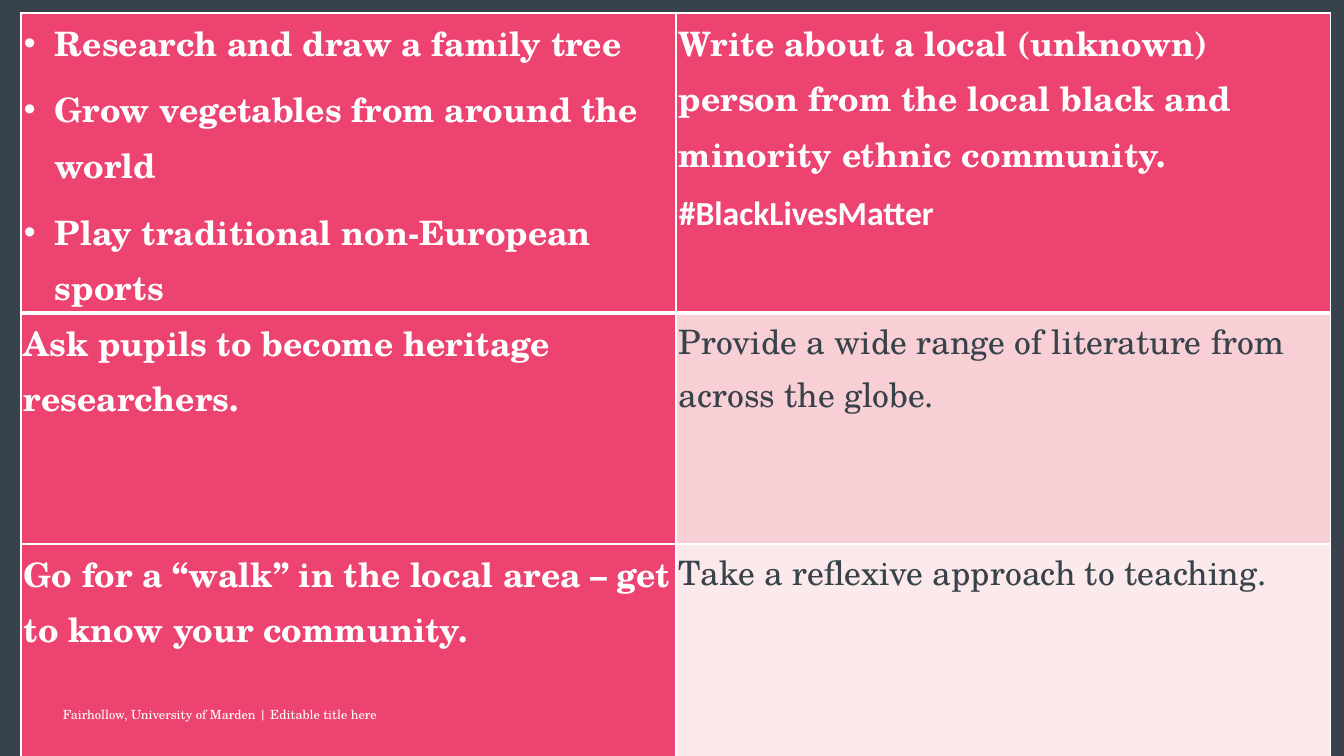
from dataclasses import dataclass

from lxml.etree import SubElement as Sub
from pptx import Presentation as Deck
from pptx.dml.color import RGBColor as Rgb
from pptx.oxml import parse_xml as to_xml
from pptx.oxml.ns import nsdecls, qn
from pptx.slide import Slide
from pptx.table import _Cell as Cell
from pptx.text.text import _Paragraph as Para
from pptx.util import Emu, Pt

WHITE = Rgb(0xFF, 0xFF, 0xFF)
SLATE = Rgb(0x37, 0x42, 0x4A)
PINK = Rgb(0xEC, 0x43, 0x71)
ROSE = Rgb(0xF8, 0xCF, 0xD5)
BLUSH = Rgb(0xFB, 0xE9, 0xEB)

SERIF = "TeX Gyre Schola"
SANS = "Calibri"
WIDE, HIGH = 1344, 756
COL = 655
ROWS = (230, 231, 246)
INDENT = 31


def px(count: int) -> Emu:
    return Emu(round(count * 914400 / 100.8))


@dataclass(frozen=True)
class Line:
    text: str
    font: str = SERIF
    dot: bool = False


@dataclass(frozen=True)
class Box:
    lines: tuple[Line, ...]
    fill: Rgb = PINK
    ink: Rgb = WHITE
    bold: bool = True


GRID = (
    (
        Box((
            Line("Research and draw a family tree", dot=True),
            Line("Grow vegetables from around the world", dot=True),
            Line("Play traditional non-European sports", dot=True),
        )),
        Box((
            Line("Write about a local (unknown) person from the local black "
                 "and minority ethnic community."),
            Line("#BlackLivesMatter", SANS),
        )),
    ),
    (
        Box((Line("Ask pupils to become heritage researchers."),)),
        Box((Line("Provide a wide range of literature from across the globe."),),
            ROSE, SLATE, False),
    ),
    (
        Box((Line("Go for a “walk” in the local area – get to know your "
                  "community."),)),
        Box((Line("Take a reflexive approach to teaching."),),
            BLUSH, SLATE, False),
    ),
)


def style(item: object, form: dict[str, object]) -> None:
    for name, value in form.items():
        setattr(item, name, value)


def write(para: Para, text: str, ink: Rgb, form: dict[str, object]) -> None:
    run = para.add_run()
    run.text = text
    style(run.font, form)
    run.font.color.rgb = ink


def add_dot(para: Para) -> None:
    props = para._p.get_or_add_pPr()
    props.set("marL", str(px(INDENT)))
    props.set("indent", str(-px(INDENT)))
    Sub(props, qn("a:buFont")).set("typeface", "Arial")
    Sub(props, qn("a:buChar")).set("char", "•")


def add_rules(cell: Cell, top: int, base: int) -> None:
    # Border lines come before the fill in the cell properties
    props = cell._tc.get_or_add_tcPr()
    sides = {"lnL": 1, "lnR": 1, "lnT": top, "lnB": base}
    for spot, (side, width) in enumerate(sides.items()):
        props.insert(spot, to_xml(
            f'<a:{side} {nsdecls("a")} w="{Pt(width)}"><a:solidFill>'
            f'<a:srgbClr val="{WHITE}"/></a:solidFill></a:{side}>'))


def fill_cell(cell: Cell, box: Box, top: int, base: int) -> None:
    style(cell, {"margin_left": px(3), "margin_right": px(3),
                 "margin_top": 0, "margin_bottom": 0})
    cell.fill.solid()
    cell.fill.fore_color.rgb = box.fill
    add_rules(cell, top, base)
    frame = cell.text_frame
    for spot, line in enumerate(box.lines):
        para = frame.add_paragraph() if spot else frame.paragraphs[0]
        style(para, {"line_spacing": 1.07, "space_after": Pt(8)})
        if line.dot:
            add_dot(para)
        write(para, line.text, box.ink,
              {"name": line.font, "size": Pt(24), "bold": box.bold})


def add_grid(slide: Slide) -> None:
    table = slide.shapes.add_table(
        len(ROWS), 2, px(21), px(13), px(2 * COL), px(sum(ROWS))).table
    style(table, {"first_row": False, "horz_banding": False})
    for col in table.columns:
        col.width = px(COL)
    for r, (high, boxes) in enumerate(zip(ROWS, GRID)):
        table.rows[r].height = px(high)
        # A thick rule parts the first row from the rest
        top, base = (3 if r == 1 else 1), (3 if r == 0 else 1)
        for c, box in enumerate(boxes):
            fill_cell(table.cell(r, c), box, top, base)


def add_foot(slide: Slide) -> None:
    frame = slide.shapes.add_textbox(
        px(63), px(707), px(596), px(20)).text_frame
    style(frame, {"word_wrap": True, "margin_left": 0, "margin_right": 0,
                  "margin_top": 0, "margin_bottom": 0})
    write(frame.paragraphs[0],
          "Fairhollow, University of Marden | Editable title here",
          WHITE, {"name": SERIF, "size": Pt(9)})


def main() -> None:
    deck = Deck()
    style(deck, {"slide_width": px(WIDE), "slide_height": px(HIGH)})
    slide = deck.slides.add_slide(deck.slide_layouts[6])
    # Dark backdrop
    back = slide.background.fill
    back.solid()
    back.fore_color.rgb = SLATE
    # Table of ideas, then the footer on top
    add_grid(slide)
    add_foot(slide)
    deck.save("out.pptx")


if __name__ == "__main__":
    main()
